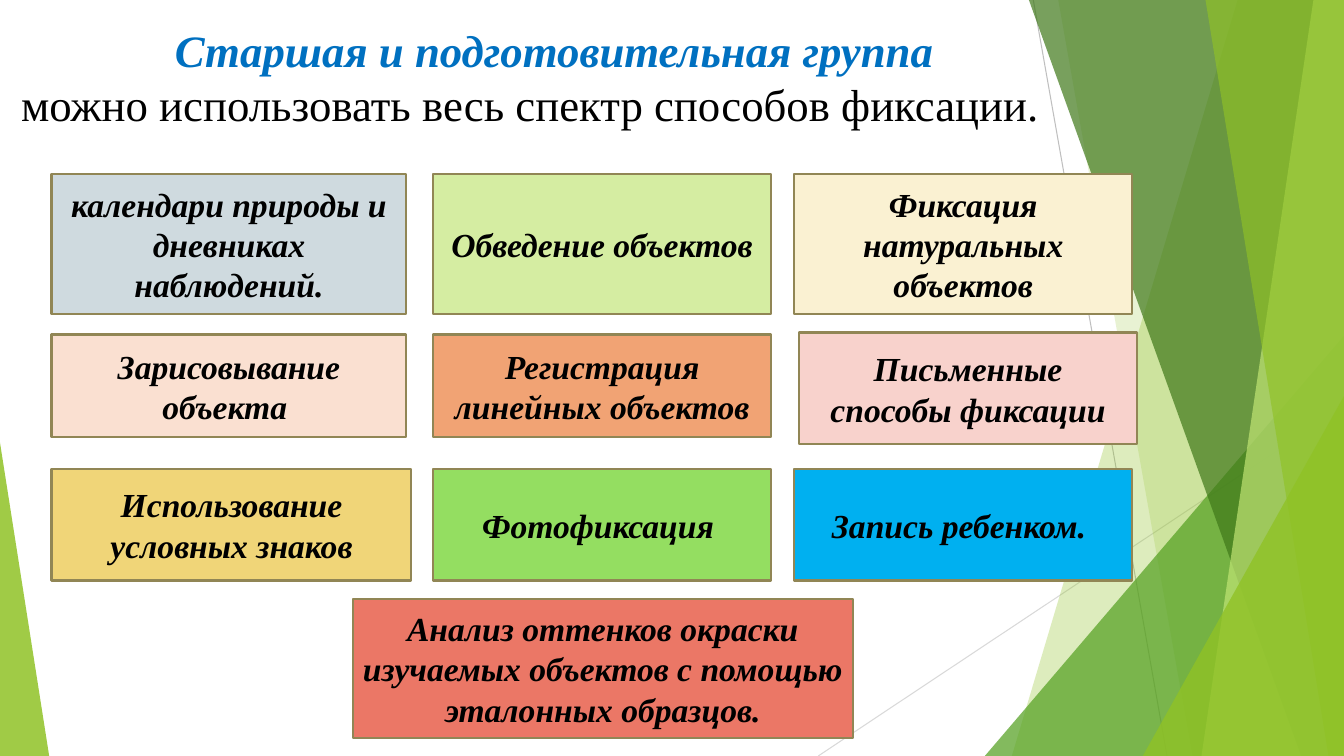
from lxml import etree
from pptx import Presentation
from pptx.dml.color import RGBColor
from pptx.enum.shapes import MSO_CONNECTOR, MSO_SHAPE
from pptx.enum.text import MSO_ANCHOR, PP_ALIGN
from pptx.oxml.ns import qn
from pptx.util import Cm, Pt

WIDTH, HEIGHT = 33.87, 19.05
FONT = "Times New Roman"
BLACK = RGBColor(0x00, 0x00, 0x00)
TITLE_BLUE = RGBColor(0x00, 0x70, 0xC0)
BORDER = RGBColor(0x91, 0x86, 0x55)
LINE_GREY = RGBColor(0xBF, 0xBF, 0xBF)
LINE_PALE = RGBColor(0xD9, 0xD9, 0xD9)
LIME = RGBColor(0x90, 0xC2, 0x26)
GREEN = RGBColor(0x54, 0xA0, 0x21)
DARK_GREEN = RGBColor(0x3F, 0x78, 0x19)
LIGHT_LIME = RGBColor(0xC0, 0xE4, 0x74)
GREY_BLUE = RGBColor(0xCF, 0xDA, 0xDF)
PALE_GREEN = RGBColor(0xD5, 0xED, 0xA2)
CREAM = RGBColor(0xFA, 0xF1, 0xD2)
PEACH = RGBColor(0xFA, 0xE0, 0xD1)
ORANGE = RGBColor(0xF1, 0xA3, 0x74)
PINK = RGBColor(0xF8, 0xD2, 0xCC)
YELLOW = RGBColor(0xF0, 0xD5, 0x78)
BRIGHT_GREEN = RGBColor(0x94, 0xDE, 0x61)
SKY_BLUE = RGBColor(0x00, 0xB0, 0xF0)
CORAL = RGBColor(0xEB, 0x77, 0x66)


def write_text(paragraph, text, size=24, color=BLACK, emphasis=True, align=PP_ALIGN.CENTER):
    """Add one run; emphasis makes it bold and italic."""
    paragraph.alignment = align
    run = paragraph.add_run()
    run.text = text
    run.font.name = FONT
    run.font.size = Pt(size)
    run.font.bold = run.font.italic = emphasis
    run.font.color.rgb = color


presentation = Presentation()
presentation.slide_width = Cm(WIDTH)
presentation.slide_height = Cm(HEIGHT)
slide = presentation.slides.add_slide(presentation.slide_layouts[6])
shapes = slide.shapes

# Thin background lines
for start_x, start_y, end_x, color in [
    (26.04, 0, 29.41, LINE_GREY),
    (WIDTH, 10.24, 20.62, LINE_PALE),
]:
    line = shapes.add_connector(
        MSO_CONNECTOR.STRAIGHT, Cm(start_x), Cm(start_y), Cm(end_x), Cm(HEIGHT)
    )
    line.line.color.rgb = color
    line.line.width = Pt(0.75)
    etree.SubElement(line._element.spPr, qn("a:effectLst"))

# Facets: a band has the x of its left edge at top and bottom and runs to the
# right side; a triangle has left, top, width and the place of its peak.
facets = [
    ((31.19, 25.5), LIME, 30),
    ((26.67, 30.05), LIME, 20),
    ((24.82, 8.46, 9.05, 1), GREEN, 72),
    ((25.93, 32.79), DARK_GREEN, 70),
    ((33.1, 30.28), LIGHT_LIME, 70),
    ((30.38, 33.48), LIME, 65),
    ((28.8, 9.98, 5.07, 1), LIME, 80),
    ((0, 11.15, 1.24, 0), LIME, 85),
]
for geometry, color, opacity in facets:
    if len(geometry) == 2:
        top_x, bottom_x = geometry
        builder = shapes.build_freeform(Cm(top_x), 0)
        corners = [(WIDTH, 0), (WIDTH, HEIGHT), (bottom_x, HEIGHT)]
        builder.add_line_segments([(Cm(x), Cm(y)) for x, y in corners])
        facet = builder.convert_to_shape()
    else:
        left, top, width, peak = geometry
        facet = shapes.add_shape(
            MSO_SHAPE.ISOSCELES_TRIANGLE, Cm(left), Cm(top), Cm(width), Cm(HEIGHT - top)
        )
        facet.adjustments[0] = peak
    facet.shadow.inherit = False
    facet.line.fill.background()
    facet.fill.solid()
    facet.fill.fore_color.rgb = color
    color_element = facet._element.spPr.find(qn("a:solidFill"))[0]
    etree.SubElement(color_element, qn("a:alpha"), val=str(opacity * 1000))

# Title
title = shapes.add_textbox(0, Cm(0.46), Cm(27.94), Cm(3))
title.text_frame.word_wrap = True
write_text(title.text_frame.paragraphs[0], "Старшая и подготовительная группа",
           size=32, color=TITLE_BLUE)
write_text(title.text_frame.add_paragraph(), " можно использовать весь спектр способов фиксации.",
           size=32, emphasis=False, align=PP_ALIGN.LEFT)

# Ways of recording: three columns by three rows, and a wide box below
columns = [(1.3, 8.94), (10.92, 8.51), (20.02, 8.51)]
rows = [(4.39, 3.53), (8.43, 2.59), (11.81, 2.82)]
methods = [
    [("календари природы и дневниках наблюдений.", GREY_BLUE),
     ("Обведение объектов", PALE_GREEN),
     ("Фиксация натуральных объектов", CREAM)],
    [("Зарисовывание объекта ", PEACH),
     ("Регистрация линейных объектов", ORANGE),
     ("Письменные способы фиксации", PINK)],
    [("Использование условных знаков", YELLOW),
     ("Фотофиксация ", BRIGHT_GREEN),
     ("Запись ребенком. ", SKY_BLUE)],
]
# Boxes that deviate from the grid: left, top, width, height
special_places = {(1, 2): (20.14, 8.38, 8.51, 2.82), (2, 0): (1.3, 11.81, 9.07, 2.82)}
boxes = []
for row, (top, height) in enumerate(rows):
    for column, (left, width) in enumerate(columns):
        place = special_places.get((row, column), (left, top, width, height))
        boxes.append((place, *methods[row][column]))
boxes.append((
    (8.89, 15.09, 12.6, 3.51),
    "Анализ оттенков окраски изучаемых объектов с помощью эталонных образцов.",
    CORAL,
))

for place, text, color in boxes:
    box = shapes.add_shape(MSO_SHAPE.RECTANGLE, *[Cm(length) for length in place])
    box.shadow.inherit = False
    box.fill.solid()
    box.fill.fore_color.rgb = color
    box.line.color.rgb = BORDER
    box.line.width = Pt(1.5)
    box.text_frame.word_wrap = True
    box.text_frame.vertical_anchor = MSO_ANCHOR.MIDDLE
    write_text(box.text_frame.paragraphs[0], text)

presentation.save("out.pptx")
